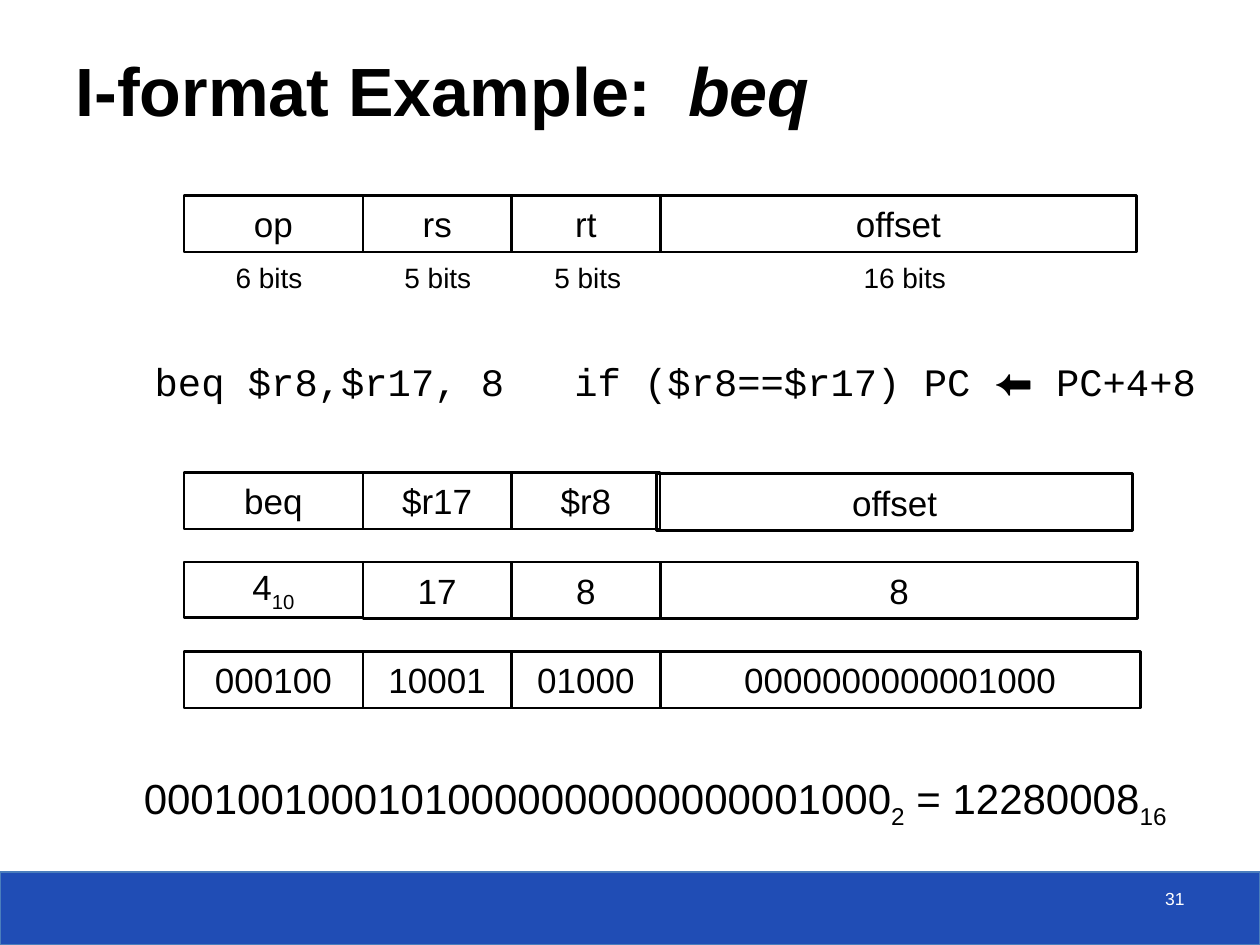
from lxml import etree
from pptx import Presentation
from pptx.dml.color import RGBColor
from pptx.enum import shapes, text
from pptx.oxml import ns
from pptx.util import Pt

COLORS = {"ink": "000000", "paper": "FFFFFF", "bar": "204DB5", "bar_edge": "4B7EBC"}
SANS, MONO = "Arial", "Courier New"
LEFT, CENTER, RIGHT = text.PP_ALIGN.LEFT, text.PP_ALIGN.CENTER, text.PP_ALIGN.RIGHT

COLUMN_LEFTS = [105.12, 207.36, 292.32, 377.28]
COLUMN_WIDTHS = [102.24, 84.96, 84.96]
ROW_HEIGHT = 32.4
ROWS = [
    {"top": 111.6, "cells": ["op", "rs", "rt", "offset"], "last_width": 272.16},
    {"top": 270, "cells": ["beq", "$r17", "$r8", "offset"], "last_width": 272.16,
     "last_shift": (-2.16, 0.72)},
    {"top": 321.12, "cells": [[("4", {}), ("10", {"sub": True})], "17", "8", "8"],
     "last_width": 272.88, "first_height": 31.68},
    {"top": 372.24, "cells": ["000100", "10001", "01000", "0000000000001000"],
     "last_width": 274.32},
]
BIT_LABELS = [("6 bits", 153.72), ("5 bits", 250.2), ("5 bits", 335.88), ("16 bits", 516.96)]
TITLE = [("I-format Example:\t", {}), ("beq", {"italic": True})]
INSTRUCTION = [
    ("beq $r8,$r17, 8\tif ($r8==$r17) PC ", {"font": MONO}),
    ("⬅", {"font": SANS}),
    (" PC+4+8", {"font": MONO}),
]
ENCODING = [
    ("00010010001010000000000000001000", {}), ("2", {"sub": True}),
    (" = 12280008", {}), ("16", {"sub": True}),
]


def color(name):
    return RGBColor.from_string(COLORS[name])


def write(shape, content, size, align=CENTER, ink="ink", font=SANS, bold=None, tab=None):
    paragraph = shape.text_frame.paragraphs[0]
    paragraph.alignment = align
    if tab:
        properties = paragraph._p.get_or_add_pPr()
        tabs = etree.SubElement(properties, ns.qn("a:tabLst"))
        etree.SubElement(tabs, ns.qn("a:tab"), pos=str(Pt(tab)), algn="l")
    paragraph.font.size = Pt(size)
    paragraph.font.color.rgb = color(ink)
    paragraph.font.bold = bold
    if font:
        paragraph.font.name = font
    runs = [(content, {})] if isinstance(content, str) else content
    for words, style in runs:
        run = paragraph.add_run()
        run.text = words
        if "font" in style:
            run.font.name = style["font"]
        if "italic" in style:
            run.font.italic = True
        if "sub" in style:
            run._r.get_or_add_rPr().set("baseline", "-25000")


def add_box(slide, left, top, width, height, line, weight, fill=None):
    shape = slide.shapes.add_shape(
        shapes.MSO_SHAPE.RECTANGLE, Pt(left), Pt(top), Pt(width), Pt(height))
    shape.shadow.inherit = False
    if fill:
        shape.fill.solid()
        shape.fill.fore_color.rgb = color(fill)
    else:
        shape.fill.background()
    shape.line.color.rgb = color(line)
    shape.line.width = Pt(weight)
    return shape


def add_text(slide, left, top, width, height, content, size, wrap=True, **options):
    box = slide.shapes.add_textbox(Pt(left), Pt(top), Pt(width), Pt(height))
    box.text_frame.word_wrap = wrap
    write(box, content, size, **options)
    return box


def add_row(slide, row):
    widths = COLUMN_WIDTHS + [row["last_width"]]
    last = len(widths) - 1
    for index, (content, left, width) in enumerate(zip(row["cells"], COLUMN_LEFTS, widths)):
        shift_x, shift_y = row.get("last_shift", (0, 0)) if index == last else (0, 0)
        height = row.get("first_height", ROW_HEIGHT) if index == 0 else ROW_HEIGHT
        cell = add_box(slide, left + shift_x, row["top"] + shift_y, width, height, "ink", 1.5)
        cell.text_frame.vertical_anchor = text.MSO_ANCHOR.MIDDLE
        write(cell, content, 20)


def main():
    presentation = Presentation()
    presentation.slide_width, presentation.slide_height = Pt(720), Pt(540)
    slide = presentation.slides.add_slide(presentation.slide_layouts[5])

    add_box(slide, 0, 498.24, 720, 41.76, "bar_edge", 0.75, fill="bar")

    title = slide.shapes.title
    title.left, title.top, title.width, title.height = Pt(36), Pt(18), Pt(668.88), Pt(59.76)
    title.text_frame.auto_size = text.MSO_AUTO_SIZE.NONE
    title.text_frame.vertical_anchor = text.MSO_ANCHOR.BOTTOM
    write(title, TITLE, 39, align=LEFT, bold=True, tab=350)

    for row in ROWS:
        add_row(slide, row)
    for label, center in BIT_LABELS:
        add_text(slide, center - 31, 145.44, 62, 26.64, label, 16, wrap=False)

    add_text(slide, 81.36, 200.6, 624.24, 47, INSTRUCTION, 22.2,
             align=LEFT, font=None, tab=239.76)
    add_text(slide, 54, 438, 640.8, 39.6, ENCODING, 24)
    add_text(slide, 516.24, 504, 167.76, 23.76, "31", 10, align=RIGHT, ink="paper")

    presentation.save("out.pptx")


if __name__ == "__main__":
    main()
